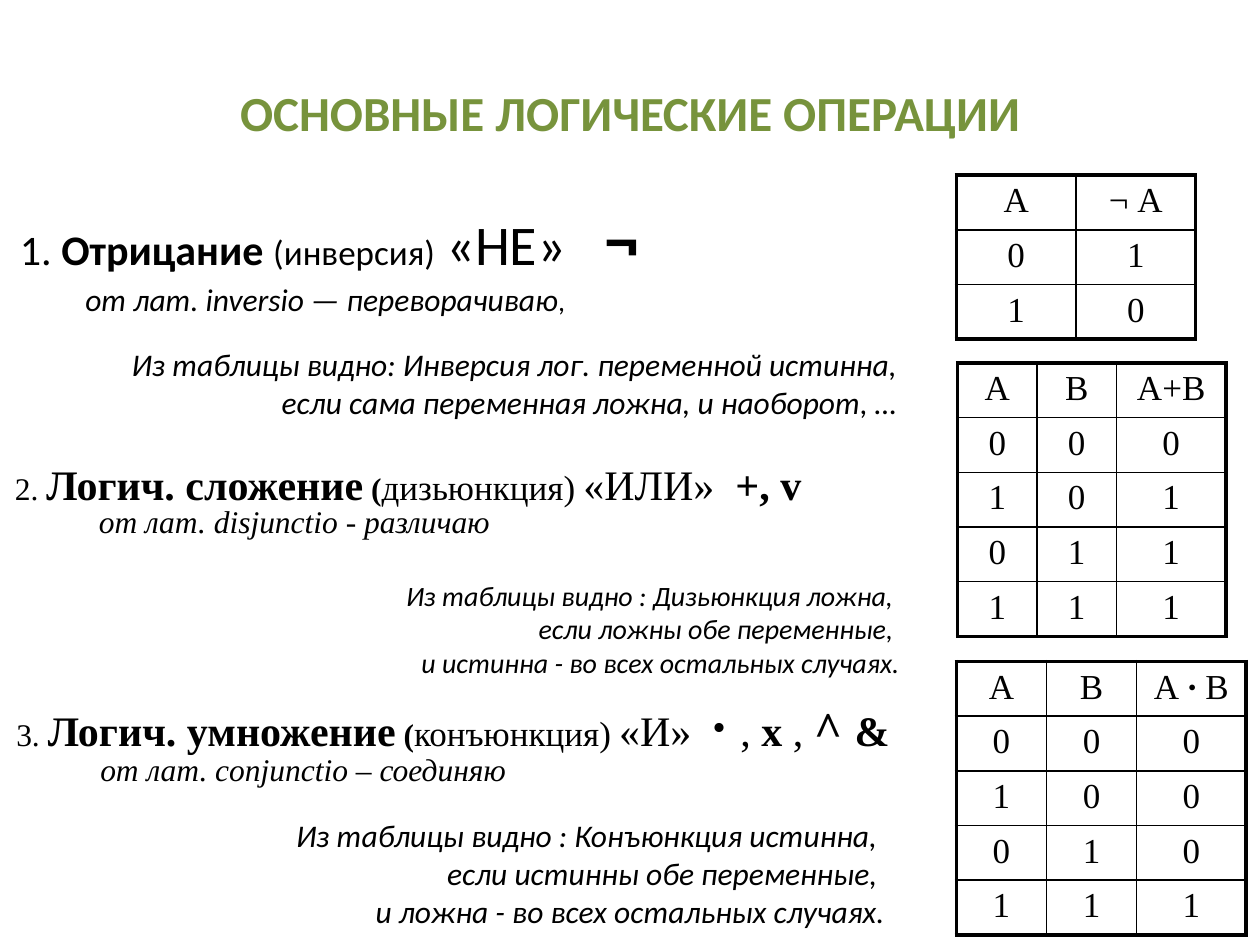
from dataclasses import dataclass
from typing import NamedTuple

from lxml.etree import SubElement
from pptx import Presentation
from pptx.dml.color import RGBColor
from pptx.enum.text import MSO_ANCHOR as Anchor, PP_ALIGN as Align
from pptx.oxml.ns import qn
from pptx.util import Pt

COLORS = {"title": "77933C", "text": "000000", "line": "000000", "cell": "FFFFFF"}
SANS, SERIF = "Calibri", "Times New Roman"
THICK, THIN = Pt(2.25), Pt(1)
ROW_HEIGHT = 31.2


class Span(NamedTuple):
    text: str
    size: float
    bold: bool = False
    italic: bool = False


@dataclass
class Line:
    spans: list[Span]
    left: float = 0
    indent: float = 0


@dataclass
class TextBlock:
    box: tuple[float, float, float, float]
    lines: list[Line]
    font: str = SANS
    align: Align = Align.LEFT
    spacing: float = 1.0


@dataclass
class TruthTable:
    left: float
    top: float
    columns: list[float]
    header: list[list[Span]]
    rows: list[str]


def add_spans(paragraph, spans: list[Span], font: str, color: str = "text") -> None:
    for span in spans:
        for index, part in enumerate(span.text.split("\n")):
            if index:
                paragraph.add_line_break()
            if not part:
                continue
            run = paragraph.add_run()
            run.text = part
            run.font.name = font
            run.font.size = Pt(span.size)
            run.font.bold = span.bold
            run.font.italic = span.italic
            run.font.color.rgb = RGBColor.from_string(COLORS[color])


def add_text_block(slide, block: TextBlock) -> None:
    frame = slide.shapes.add_textbox(*map(Pt, block.box)).text_frame
    frame.word_wrap = True
    for index, line in enumerate(block.lines):
        paragraph = frame.add_paragraph() if index else frame.paragraphs[0]
        paragraph.alignment = block.align
        paragraph.line_spacing = block.spacing
        if line.left:
            properties = paragraph._p.get_or_add_pPr()
            properties.set("marL", str(Pt(line.left)))
            properties.set("indent", str(Pt(line.indent)))
        add_spans(paragraph, line.spans, block.font)


def add_borders(cell, outer: dict[str, bool]) -> None:
    properties = cell._tc.get_or_add_tcPr()
    for side, is_outer in outer.items():
        line = SubElement(properties, qn(f"a:ln{side}"), w=str(THICK if is_outer else THIN))
        fill = SubElement(line, qn("a:solidFill"))
        SubElement(fill, qn("a:srgbClr"), val=COLORS["line"])


def add_truth_table(slide, truth: TruthTable) -> None:
    content = [truth.header] + [[[Span(digit, 20)] for digit in row] for row in truth.rows]
    last_row, last_column = len(content) - 1, len(truth.columns) - 1
    table = slide.shapes.add_table(
        len(content), len(truth.columns), Pt(truth.left), Pt(truth.top),
        Pt(sum(truth.columns)), Pt(ROW_HEIGHT * len(content))).table
    table.first_row = table.horz_banding = False
    for column, width in zip(table.columns, truth.columns):
        column.width = Pt(width)
    for r, row in enumerate(content):
        table.rows[r].height = Pt(ROW_HEIGHT)
        for c, spans in enumerate(row):
            cell = table.cell(r, c)
            add_borders(cell, {"L": c == 0, "R": c == last_column,
                               "T": r == 0, "B": r == last_row})
            cell.fill.solid()
            cell.fill.fore_color.rgb = RGBColor.from_string(COLORS["cell"])
            paragraph = cell.text_frame.paragraphs[0]
            paragraph.alignment = Align.CENTER
            add_spans(paragraph, spans, SERIF)


def operation_line(number: str, name: str, latin_name: str, symbols: list[Span],
                   origin: str) -> Line:
    spans = [Span(number, 18), Span(name, 24, True), Span(" ", 18), Span("(", 18, True),
             Span(latin_name, 20), Span(" ", 18), *symbols,
             Span("\n" + origin, 18, italic=True)]
    return Line(spans, 48, -48)


def conclusion(box: tuple[float, float, float, float], text: str, size: float) -> TextBlock:
    return TextBlock(box, [Line([Span(text, size, italic=True)])], align=Align.RIGHT)


TEXT_BLOCKS = [
    # Negation
    TextBlock((4.3, 113.8, 521.3, 80.6), [
        Line([Span("1. ", 24), Span("Отрицание ", 24, True), Span("(инверсия)", 20),
              Span(" ", 28), Span("«НЕ»   ", 32), Span("¬", 40, True)], 48, -48),
        Line([Span("от лат. inversio — переворачиваю", 18, italic=True),
              Span(",", 16), Span(" ", 20)], 79.2, -41.8),
    ], spacing=0.9),
    conclusion((32.4, 193.7, 487.4, 50.4),
               "Из таблицы видно: Инверсия лог. переменной истинна, "
               "если сама переменная ложна, и наоборот, …", 18),
    # Disjunction
    TextBlock((1.4, 264.2, 541.4, 62.6), [operation_line(
        "2. ", "Логич. сложение", "дизьюнкция)",
        [Span("«ИЛИ»  ", 24), Span("+, v ", 24, True)],
        "от лат. disjunctio - различаю")], SERIF, spacing=0.8),
    conclusion((33.8, 326.9, 487.4, 64.8),
               "Из таблицы видно : Дизьюнкция ложна, \nесли ложны обе переменные, \n"
               "и истинна - во всех остальных случаях.", 16),
    # Conjunction
    TextBlock((2.2, 398.2, 527, 62.6), [operation_line(
        "3. ", "Логич. умножение", "конъюнкция)",
        [Span("«И»  ", 24), Span("∙ ", 32, True), Span(", ", 24), Span("х", 24, True),
         Span(" , ", 24), Span("^ ", 28, True), Span("& ", 24, True)],
        "от лат. conjunctio – соединяю")], SERIF, spacing=0.8),
    conclusion((25.2, 463, 487.4, 72),
               "Из таблицы видно : Конъюнкция истинна, \nесли истинны обе переменные, \n"
               "и ложна - во всех остальных случаях.", 18),
]

A, B = [Span("А", 20)], [Span("В", 20)]
TRUTH_TABLES = [
    TruthTable(546.5, 100.1, [68.4, 68.4], [A, [Span("¬ А", 20)]], ["01", "10"]),
    TruthTable(547.2, 207.4, [45.4, 45.4, 62.6], [A, B, [Span("А+В", 20)]],
               ["000", "101", "011", "111"]),
    TruthTable(546.5, 378, [51.5, 51.5, 62.6],
               [A, B, [Span("А ", 20), Span("∙", 20, True), Span(" В", 20)]],
               ["000", "100", "010", "111"]),
]


def main() -> None:
    presentation = Presentation()
    presentation.slide_width, presentation.slide_height = Pt(720), Pt(540)
    slide = presentation.slides.add_slide(presentation.slide_layouts[5])

    # Title
    title = slide.shapes.title
    title.left, title.top, title.width, title.height = map(Pt, (36, 37.4, 648, 52.6))
    title.text_frame.vertical_anchor = Anchor.MIDDLE
    paragraph = title.text_frame.paragraphs[0]
    paragraph.alignment = Align.CENTER
    add_spans(paragraph, [Span("ОСНОВНЫЕ ЛОГИЧЕСКИЕ ОПЕРАЦИИ", 28, True)], SANS, "title")

    # Operations and their truth tables
    for block in TEXT_BLOCKS:
        add_text_block(slide, block)
    for truth in TRUTH_TABLES:
        add_truth_table(slide, truth)

    presentation.save("out.pptx")


if __name__ == "__main__":
    main()
